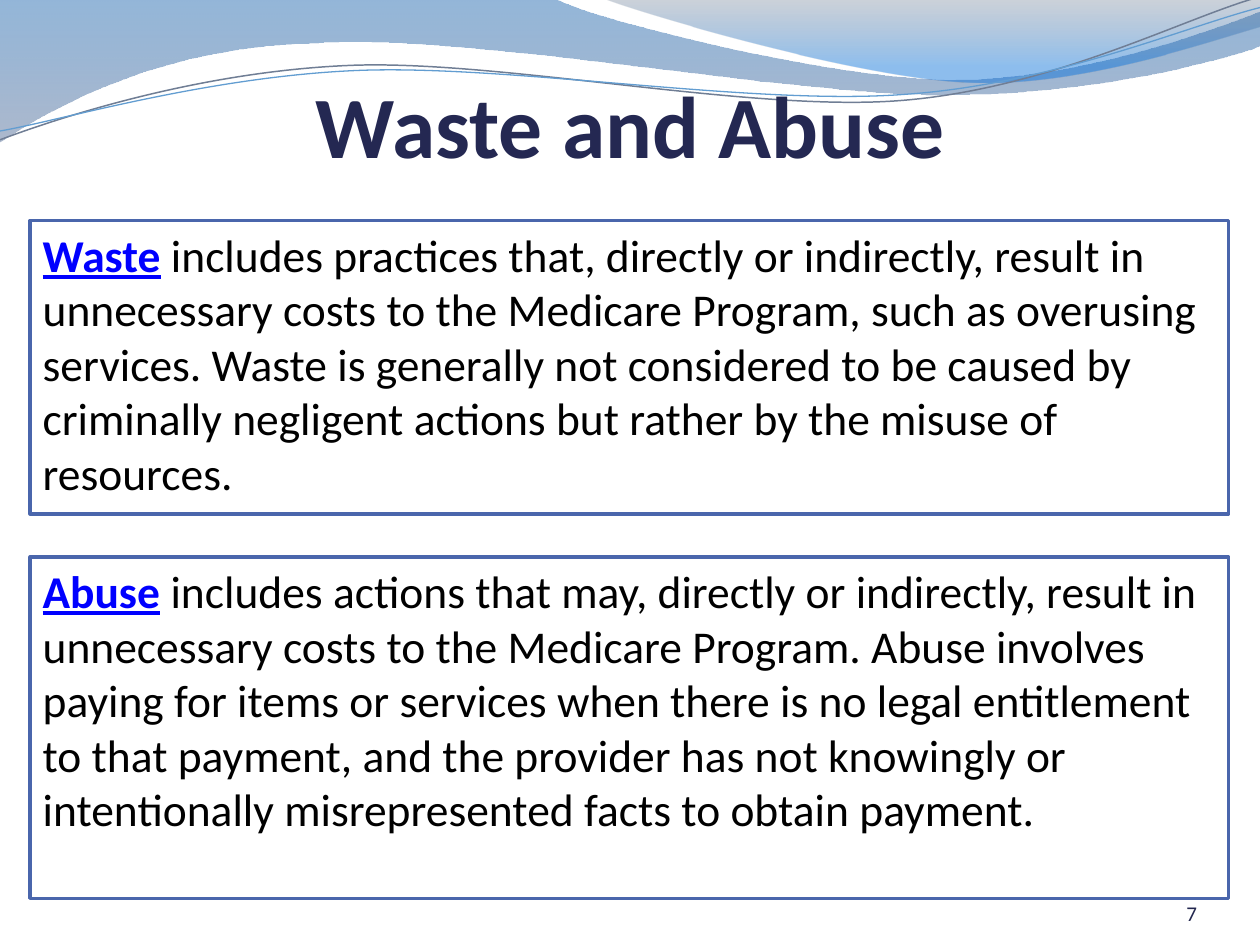
from lxml.etree import SubElement
from pptx import Presentation
from pptx.dml.color import RGBColor
from pptx.enum.shapes import MSO_SHAPE
from pptx.enum.text import MSO_ANCHOR, PP_ALIGN
from pptx.oxml.ns import qn
from pptx.util import Inches, Pt

NAVY = RGBColor(0x24, 0x28, 0x52)
NUMBER = RGBColor(0x22, 0x26, 0x4E)
BORDER = RGBColor(0x4A, 0x66, 0xAC)
TERM = RGBColor(0x00, 0x00, 0xFF)
BLACK = RGBColor(0x00, 0x00, 0x00)
WHITE = RGBColor(0xFF, 0xFF, 0xFF)
DEEP_BLUE = RGBColor(0x12, 0x5E, 0xAA)
SLATE = RGBColor(0x69, 0x7F, 0xA4)
GREY = RGBColor(0x59, 0x69, 0x82)
BRIGHT_BLUE = RGBColor(0x06, 0x70, 0xDA)
LINE_GREY = RGBColor(0x70, 0x7E, 0x95)
LINE_BLUE = RGBColor(0x62, 0x9D, 0xD1)
FONT = "Calibri"

WAVES = [
    ([(0, 0), (4.4, -0.01), (4.76, 0.17, 6.64, 0.63, 7.58, 0.63),
      (8.53, 0.63, 9.58, 0.26, 10, 0.09), (10.01, 0.36),
      (9.83, 0.44, 8.7, 0.76, 7.46, 0.75), (6.22, 0.75, 3.82, 0.28, 2.57, 0.34),
      (1.29, 0.36, 0.46, 0.83, -0.01, 1.13)],
     [(0, DEEP_BLUE, 45), (1, SLATE, 55)]),
    ([(4.79, -0.01), (5.09, 0.11, 6.82, 0.62, 7.69, 0.65),
      (8.56, 0.69, 9.61, 0.32, 10, 0.21), (10, 0)],
     [(0, GREY, 30), (0.8, BRIGHT_BLUE, 45)]),
]
SWOOSHES = [
    ([(0, 1.11), (0.48, 0.93, 1.58, 0.57, 2.77, 0.52),
      (3.95, 0.47, 5.93, 0.89, 7.13, 0.8), (8.33, 0.71, 9.38, 0.15, 9.98, -0.02)],
     LINE_GREY, 0.85),
    ([(0, 1.04), (0.47, 0.96, 1.64, 0.61, 2.83, 0.56),
      (4.03, 0.51, 5.97, 0.84, 7.17, 0.75), (8.36, 0.67, 9.41, 0.21, 10, 0.06)],
     LINE_BLUE, 0.75),
]
TITLE = "Waste and Abuse"
DEFINITIONS = [
    (1.75, 2.33, "Waste",
     " includes practices that, directly or indirectly, result in unnecessary costs to "
     "the Medicare Program, such as overusing services. Waste is generally not considered "
     "to be caused by criminally negligent actions but rather by the misuse of resources."),
    (4.42, 2.71, "Abuse",
     " includes actions that may, directly or indirectly, result in unnecessary costs to "
     "the Medicare Program. Abuse involves paying for items or services when there is no "
     "legal entitlement to that payment, and the provider has not knowingly or "
     "intentionally misrepresented facts to obtain payment."),
]
PAGE = "7"


def add_curve(s, segments, close):
    segments = [[Inches(v) for v in seg] for seg in segments]
    ends = [seg[-2:] for seg in segments]
    builder = s.shapes.build_freeform(*ends[0])
    builder.add_line_segments(ends[1:], close=close)
    sp = builder.convert_to_shape()
    sp.shadow.inherit = False
    lines = list(sp._element.iter(qn("a:lnTo")))
    for line, seg in zip(lines, segments[1:]):
        if len(seg) == 2:
            continue
        curve = line.makeelement(qn("a:cubicBezTo"))
        for x, y in zip(seg[::2], seg[1::2]):
            pt = SubElement(curve, qn("a:pt"))
            pt.set("x", str(x - sp.left))
            pt.set("y", str(y - sp.top))
        line.getparent().replace(line, curve)
    return sp


def add_wave(s, segments, stops):
    sp = add_curve(s, segments, True)
    sp.line.fill.background()
    sp.fill.gradient()
    sp.fill.gradient_angle = 270
    for stop, (position, color, opacity) in zip(sp.fill.gradient_stops, stops):
        stop.position = position
        stop.color.rgb = color
    colors = sp._element.spPr.find(qn("a:gradFill")).iter(qn("a:srgbClr"))
    for clr, (position, color, opacity) in zip(colors, stops):
        SubElement(clr, qn("a:alpha")).set("val", str(opacity * 1000))


def add_swoosh(s, segments, color, width):
    sp = add_curve(s, segments, False)
    sp.fill.background()
    sp.line.color.rgb = color
    sp.line.width = Pt(width)


def add_label(s, box, text, align, size, color, bold, bottom):
    tf = s.shapes.add_textbox(*map(Inches, box)).text_frame
    tf.word_wrap = True
    tf.vertical_anchor = MSO_ANCHOR.BOTTOM
    tf.margin_left = tf.margin_right = tf.margin_top = 0
    tf.margin_bottom = Inches(bottom)
    p = tf.paragraphs[0]
    p.text = text
    p.alignment = align
    p.font.name, p.font.size, p.font.bold = FONT, Pt(size), bold
    p.font.color.rgb = color


def add_definition(s, top, height, term, meaning):
    sp = s.shapes.add_shape(MSO_SHAPE.RECTANGLE, Inches(0.24), Inches(top),
                            Inches(9.51), Inches(height))
    sp.shadow.inherit = False
    sp.fill.solid()
    sp.fill.fore_color.rgb = WHITE
    sp.line.color.rgb = BORDER
    sp.line.width = Pt(2)
    tf = sp.text_frame
    tf.word_wrap = True
    tf.vertical_anchor = MSO_ANCHOR.TOP
    p = tf.paragraphs[0]
    p.alignment = PP_ALIGN.LEFT
    p.space_before = Pt(5)
    p.font.name, p.font.size = FONT, Pt(26)
    for text, color, is_term in ((term, TERM, True), (meaning, BLACK, False)):
        r = p.add_run()
        r.text = text
        r.font.color.rgb = color
        r.font.bold = r.font.underline = is_term


prs = Presentation()
prs.slide_width, prs.slide_height = Inches(10), Inches(7.5)
s = prs.slides.add_slide(prs.slide_layouts[6])
for wave in WAVES:
    add_wave(s, *wave)
for swoosh in SWOOSHES:
    add_swoosh(s, *swoosh)
add_label(s, (0.25, 0.42, 9.51, 1.12), TITLE, PP_ALIGN.CENTER, 50, NAVY, True, 0.14)
for definition in DEFINITIONS:
    add_definition(s, *definition)
add_label(s, (8.67, 6.95, 0.83, 0.4), PAGE, PP_ALIGN.RIGHT, 12, NUMBER, False, 0)
prs.save("out.pptx")
